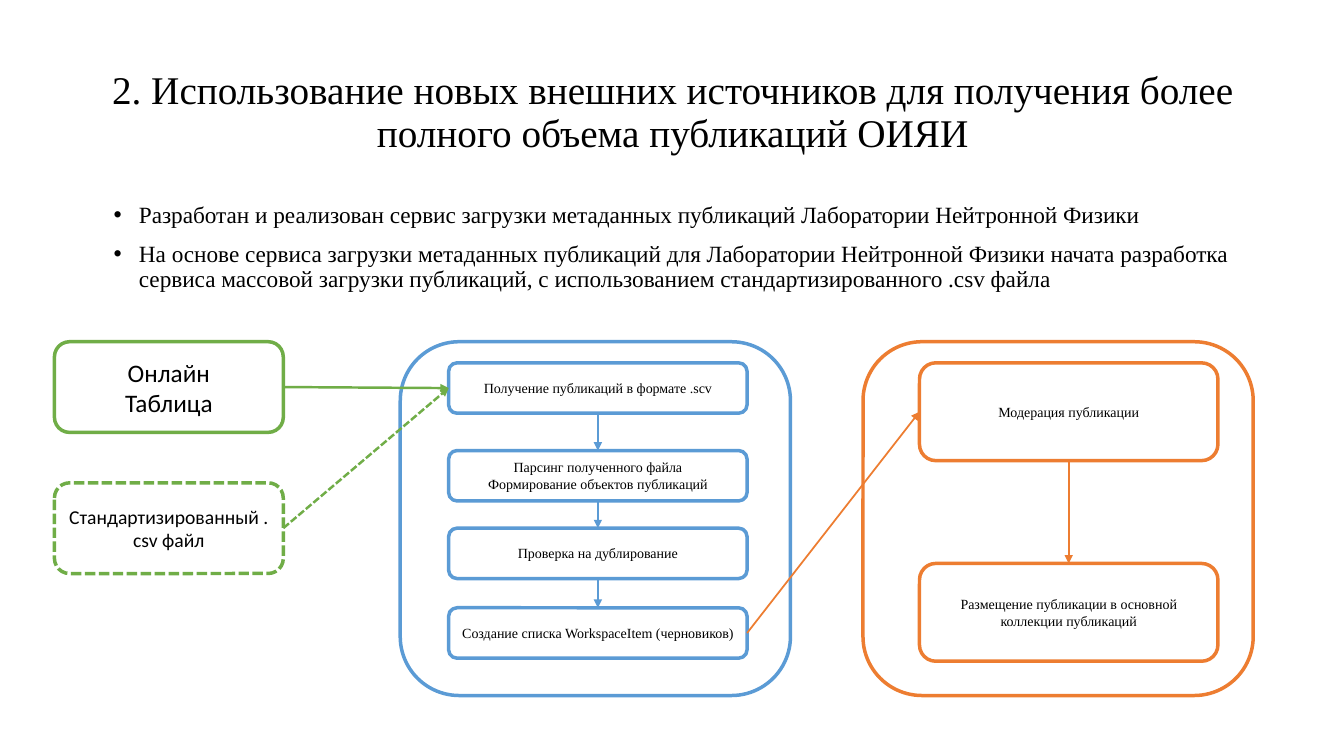
from dataclasses import dataclass

from lxml.etree import SubElement
from pptx import Presentation
from pptx.dml.color import RGBColor
from pptx.enum.dml import MSO_LINE
from pptx.enum.shapes import MSO_CONNECTOR, MSO_SHAPE
from pptx.enum.text import MSO_ANCHOR, MSO_AUTO_SIZE, PP_ALIGN
from pptx.oxml.ns import qn
from pptx.util import Inches, Pt


@dataclass(frozen=True)
class Theme:
    black: RGBColor = RGBColor(0x00, 0x00, 0x00)
    white: RGBColor = RGBColor(0xFF, 0xFF, 0xFF)
    source: RGBColor = RGBColor(0x70, 0xAD, 0x47)
    processing: RGBColor = RGBColor(0x5B, 0x9B, 0xD5)
    publishing: RGBColor = RGBColor(0xED, 0x7D, 0x31)
    serif: str = "Times New Roman"
    sans: str = "Calibri"
    title: float = 28
    body: float = 16.6
    table_source: float = 18
    file_source: float = 14
    step: float = 10
    outline: float = 2.5
    source_arrow: float = 1.75
    step_arrow: float = 1.25


THEME = Theme()
RIGHT, LEFT, TOP, BOTTOM = 3, 1, 0, 2  # connection sites of a rounded box


def set_font(paragraph, name, size):
    paragraph.font.name = name
    paragraph.font.size = Pt(size)
    paragraph.font.color.rgb = THEME.black


def add_title(slide, box, wording):
    title = slide.shapes.title
    title.left, title.top, title.width, title.height = map(Inches, box)
    frame = title.text_frame
    frame.text = wording
    frame.auto_size = MSO_AUTO_SIZE.NONE
    frame.vertical_anchor = MSO_ANCHOR.MIDDLE
    heading = frame.paragraphs[0]
    heading.alignment = PP_ALIGN.CENTER
    heading.line_spacing = 0.9
    set_font(heading, THEME.serif, THEME.title)


def add_bullets(slide, box, points):
    frame = slide.shapes.add_textbox(*map(Inches, box)).text_frame
    frame.word_wrap = True
    frame.text = "\n".join(points)
    for index, point in enumerate(frame.paragraphs):
        point.line_spacing = 0.9
        point.space_before = Pt(10 if index else 0)
        properties = point._p.get_or_add_pPr()
        properties.set("marL", str(Inches(0.25)))
        properties.set("indent", str(Inches(-0.25)))
        SubElement(properties, qn("a:buFont"), typeface="Arial")
        SubElement(properties, qn("a:buChar"), char="•")
        set_font(point, THEME.serif, THEME.body)


def add_box(slide, box, color, wording="", font=THEME.serif, size=THEME.step, dash=None):
    rounded = slide.shapes.add_shape(MSO_SHAPE.ROUNDED_RECTANGLE, *map(Inches, box))
    rounded.shadow.inherit = False
    rounded.fill.solid()
    rounded.fill.fore_color.rgb = THEME.white
    rounded.line.color.rgb = color
    rounded.line.width = Pt(THEME.outline)
    if dash:
        rounded.line.dash_style = dash
    if wording:
        frame = rounded.text_frame
        frame.text = wording
        frame.vertical_anchor = MSO_ANCHOR.MIDDLE
        for paragraph in frame.paragraphs:
            paragraph.alignment = PP_ALIGN.CENTER
            set_font(paragraph, font, size)
    return rounded


def add_arrow(slide, start, start_site, end, end_site, color, width=THEME.step_arrow, dash=None):
    arrow = slide.shapes.add_connector(MSO_CONNECTOR.STRAIGHT, 0, 0, 0, 0)
    arrow.begin_connect(start, start_site)
    arrow.end_connect(end, end_site)
    arrow.line.color.rgb = color
    arrow.line.width = Pt(width)
    if dash:
        arrow.line.dash_style = dash
    properties = arrow._element.spPr
    SubElement(properties.get_or_add_ln(), qn("a:tailEnd"), type="triangle")
    SubElement(properties, qn("a:effectLst"))


def add_stage(slide, box, color, inset, step_height, steps):
    """Draw a frame with a column of linked steps, given as (offset, wording)."""
    left, top, _, _ = box
    add_box(slide, box, color)
    boxes = [add_box(slide, (left + inset, top + offset, 2.96, step_height), color, wording)
             for offset, wording in steps]
    for upper, lower in zip(boxes, boxes[1:]):
        add_arrow(slide, upper, BOTTOM, lower, TOP, color)
    return boxes


def add_sources(slide, box, target):
    """Stack the two data sources and link each of them to the target step."""
    left, top, width, height = box
    sources = [
        ("Онлайн\nТаблица", THEME.table_source, None),
        ("Стандартизированный .csv файл", THEME.file_source, MSO_LINE.SQUARE_DOT),
    ]
    for index, (wording, size, dash) in enumerate(sources):
        source = add_box(slide, (left, top + index * 1.4, width, height),
                         THEME.source, wording, THEME.sans, size, dash)
        add_arrow(slide, source, RIGHT, target, LEFT, THEME.source, THEME.source_arrow, dash)


def add_workflow(slide, box):
    left, top, _, height = box
    processing = add_stage(
        slide, (left + 3.43, top, 3.87, height), THEME.processing, 0.48, 0.5,
        [(0.21, "Получение публикаций в формате .scv"),
         (1.08, "Парсинг полученного файла\nФормирование объектов публикаций"),
         (1.85, "Проверка на дублирование"),
         (2.64, "Создание списка WorkspaceItem (черновиков)")])
    publishing = add_stage(
        slide, (left + 8.02, top, 3.87, height), THEME.publishing, 0.56, 0.97,
        [(0.21, "Модерация публикации"),
         (2.2, "Размещение публикации в основной коллекции публикаций")])
    add_arrow(slide, processing[-1], RIGHT, publishing[0], LEFT, THEME.publishing)
    add_sources(slide, (left, top, 2.27, 0.9), processing[0])


def main():
    deck = Presentation()
    deck.slide_width, deck.slide_height = Inches(13.33), Inches(7.5)
    slide = deck.slides.add_slide(deck.slide_layouts.get_by_name("Title Only"))
    add_title(slide, (0.92, 0.4, 11.5, 1.45),
              "2. Использование новых внешних источников для получения более "
              "полного объема публикаций ОИЯИ")
    add_bullets(slide, (1.03, 1.97, 11.27, 1.07), [
        "Разработан и реализован сервис загрузки метаданных публикаций "
        "Лаборатории Нейтронной Физики",
        "На основе сервиса загрузки метаданных публикаций для Лаборатории "
        "Нейтронной Физики начата разработка сервиса массовой загрузки "
        "публикаций, с использованием стандартизированного .csv файла",
    ])
    add_workflow(slide, (0.54, 3.39, 11.89, 3.51))
    deck.save("out.pptx")


if __name__ == "__main__":
    main()
